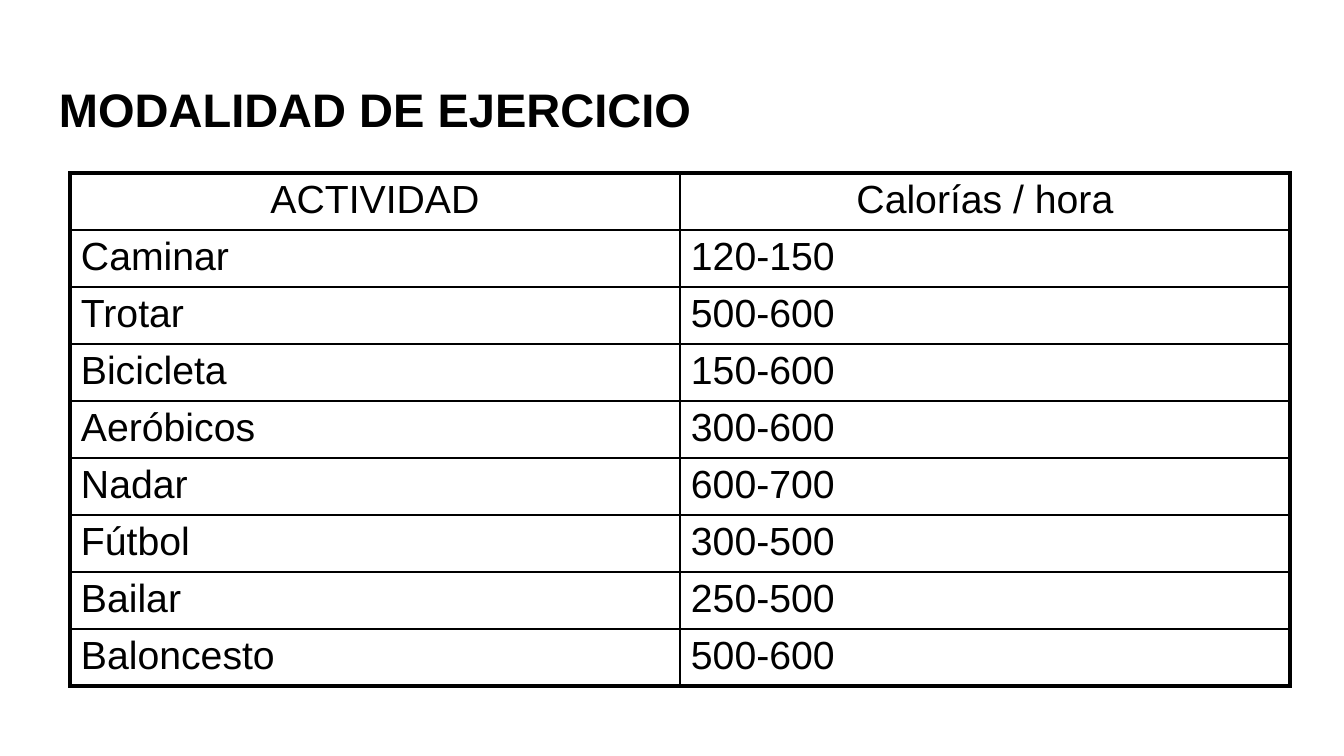
"""Build a slide with a table of calories burned per hour by activity."""
from typing import NamedTuple

from lxml.etree import SubElement
from pptx import Presentation
from pptx.dml.color import RGBColor
from pptx.enum.text import MSO_ANCHOR, PP_ALIGN
from pptx.oxml.ns import qn
from pptx.util import Emu, Pt

FONT = "Arial"
BLACK, WHITE = "000000", "FFFFFF"
THIN, THICK = 1, 2.25


class Box(NamedTuple):
    left: int
    top: int
    width: int
    height: int


class Row(NamedTuple):
    activity: str
    calories: str


TITLE_BOX = Box(46, 66, 1253, 85)
TABLE_BOX = Box(70, 173, 1220, 513)
ROWS = [
    Row("ACTIVIDAD", "Calorías / hora"),
    Row("Caminar", "120-150"),
    Row("Trotar", "500-600"),
    Row("Bicicleta", "150-600"),
    Row("Aeróbicos", "300-600"),
    Row("Nadar", "600-700"),
    Row("Fútbol", "300-500"),
    Row("Bailar", "250-500"),
    Row("Baloncesto", "500-600"),
]


def px(n: int) -> Emu:
    return Emu(round(n * 914400 / 134.4))


def color(value: str) -> RGBColor:
    return RGBColor.from_string(value)


def add_run(p, text: str, size: float, bold: bool = False) -> None:
    r = p.add_run()
    r.text = text
    r.font.name = FONT
    r.font.size = Pt(size)
    r.font.bold = bold
    r.font.color.rgb = color(BLACK)


def add_border(cell, side: str, width: float) -> None:
    tc_pr = cell._tc.get_or_add_tcPr()
    ln = SubElement(tc_pr, qn(f"a:ln{side}"), w=str(Pt(width)))
    fill = SubElement(ln, qn("a:solidFill"))
    SubElement(fill, qn("a:srgbClr"), val=BLACK)


def add_title(slide, box: Box, text: str) -> None:
    sp = slide.shapes.add_textbox(*map(px, box))
    tf = sp.text_frame
    tf.word_wrap = True
    tf.vertical_anchor = MSO_ANCHOR.MIDDLE
    tf.margin_left = tf.margin_right = tf.margin_top = tf.margin_bottom = px(13)
    add_run(tf.paragraphs[0], text, 25.2, bold=True)


def add_calorie_table(slide, box: Box, rows: list[Row]) -> None:
    n_rows, n_cols = len(rows), len(Row._fields)
    table = slide.shapes.add_table(n_rows, n_cols, *map(px, box)).table
    table.first_row = table.horz_banding = False
    for column in table.columns:
        column.width = px(box.width // n_cols)
    for i, row in enumerate(rows):
        table.rows[i].height = px(box.height // n_rows)
        for j, text in enumerate(row):
            cell = table.cell(i, j)
            cell.margin_left = cell.margin_right = px(11)
            cell.margin_top = cell.margin_bottom = px(5)
            outer = {"L": j == 0, "R": j == n_cols - 1, "T": i == 0, "B": i == n_rows - 1}
            for side, is_outer in outer.items():
                add_border(cell, side, THICK if is_outer else THIN)
            cell.fill.solid()
            cell.fill.fore_color.rgb = color(WHITE)
            p = cell.text_frame.paragraphs[0]
            p.alignment = PP_ALIGN.CENTER if i == 0 else PP_ALIGN.LEFT
            add_run(p, text, 21)


def main() -> None:
    prs = Presentation()
    prs.slide_width, prs.slide_height = px(1344), px(756)
    slide = prs.slides.add_slide(prs.slide_layouts[6])
    add_title(slide, TITLE_BOX, "MODALIDAD DE EJERCICIO")
    add_calorie_table(slide, TABLE_BOX, ROWS)
    prs.save("out.pptx")


if __name__ == "__main__":
    main()
